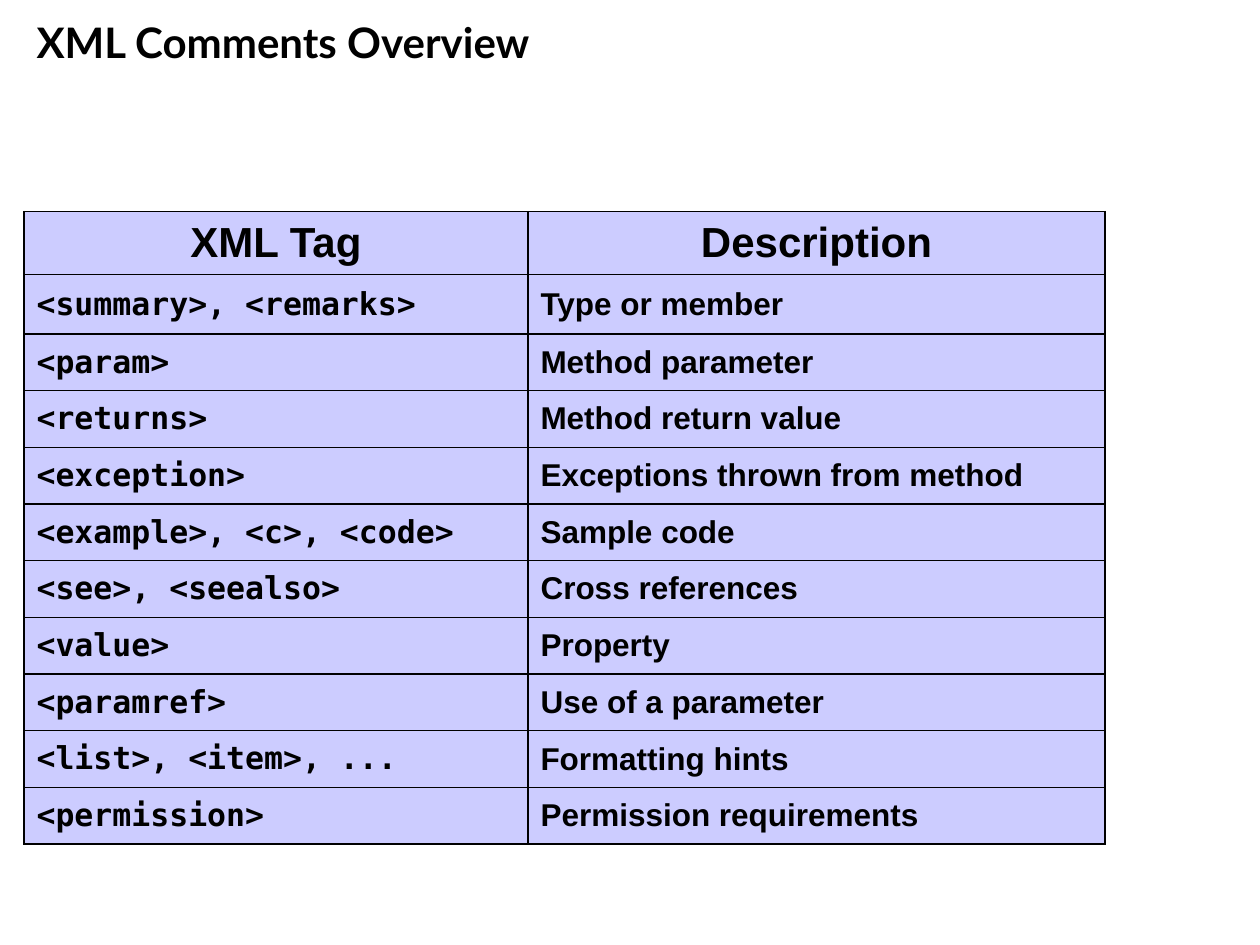
from lxml.etree import SubElement as Sub
from pptx import Presentation
from pptx.dml.color import RGBColor
from pptx.enum.text import MSO_ANCHOR as Anchor, PP_ALIGN as Align
from pptx.oxml.ns import qn
from pptx.util import Inches, Pt

# Content
TITLE = "XML Comments Overview"
HEAD = ("XML Tag", "Description")
TAGS = [
    ("<summary>, <remarks>", "Type or member"),
    ("<param>", "Method parameter"),
    ("<returns>", "Method return value"),
    ("<exception>", "Exceptions thrown from method"),
    ("<example>, <c>, <code>", "Sample code"),
    ("<see>, <seealso>", "Cross references"),
    ("<value>", "Property"),
    ("<paramref>", "Use of a parameter"),
    ("<list>, <item>, ...", "Formatting hints"),
    ("<permission>", "Permission requirements"),
]

# Formats
INK, FILL = "000000", "CCCCFF"
TOP = {"name": "Lato", "size": Pt(24), "bold": True}
HEADER = {"name": "Arial", "size": Pt(24), "bold": True}
CODE = {"name": "DejaVu Sans Mono", "size": Pt(18), "bold": True}
BODY = {"name": "Arial", "size": Pt(18), "bold": True}
WIDTHS = (4, 4.58)
HEIGHTS = [0.5, 0.47] + [0.45] * (len(TAGS) - 1)


def paint(color, value):
    color.rgb = RGBColor.from_string(value)


def write(frame, text, style, align):
    para = frame.paragraphs[0]
    para.alignment = align
    run = para.add_run()
    run.text = text
    for key, value in style.items():
        setattr(run.font, key, value)
    paint(run.font.color, INK)


def border(cell):
    props = cell._tc.get_or_add_tcPr()
    for i, side in enumerate(("lnL", "lnR", "lnT", "lnB")):
        line = props.makeelement(qn("a:" + side), {"w": str(Pt(1))})
        fill = Sub(line, qn("a:solidFill"))
        Sub(fill, qn("a:srgbClr"), val=INK)
        props.insert(i, line)


deck = Presentation()
deck.slide_width, deck.slide_height = Inches(10), Inches(7.5)
slide = deck.slides.add_slide(deck.slide_layouts[5])

# Title
title = slide.shapes.title
title.left, title.top = Inches(0.19), Inches(0.08)
title.width, title.height = Inches(9.71), Inches(1)
title.text_frame.vertical_anchor = Anchor.TOP
write(title.text_frame, TITLE, TOP, Align.LEFT)

# Table
rows = [HEAD] + TAGS
table = slide.shapes.add_table(
    len(rows), len(HEAD), Inches(0.19), Inches(1.68),
    Inches(sum(WIDTHS)), Inches(sum(HEIGHTS))).table
for col, width in zip(table.columns, WIDTHS):
    col.width = Inches(width)
for row, height in zip(table.rows, HEIGHTS):
    row.height = Inches(height)

# Cells
for r, texts in enumerate(rows):
    styles = (CODE, BODY) if r else (HEADER, HEADER)
    for c, (text, style) in enumerate(zip(texts, styles)):
        cell = table.cell(r, c)
        cell.vertical_anchor = Anchor.MIDDLE
        cell.fill.solid()
        paint(cell.fill.fore_color, FILL)
        border(cell)
        write(cell.text_frame, text, style, Align.LEFT if r else Align.CENTER)

deck.save("out.pptx")
